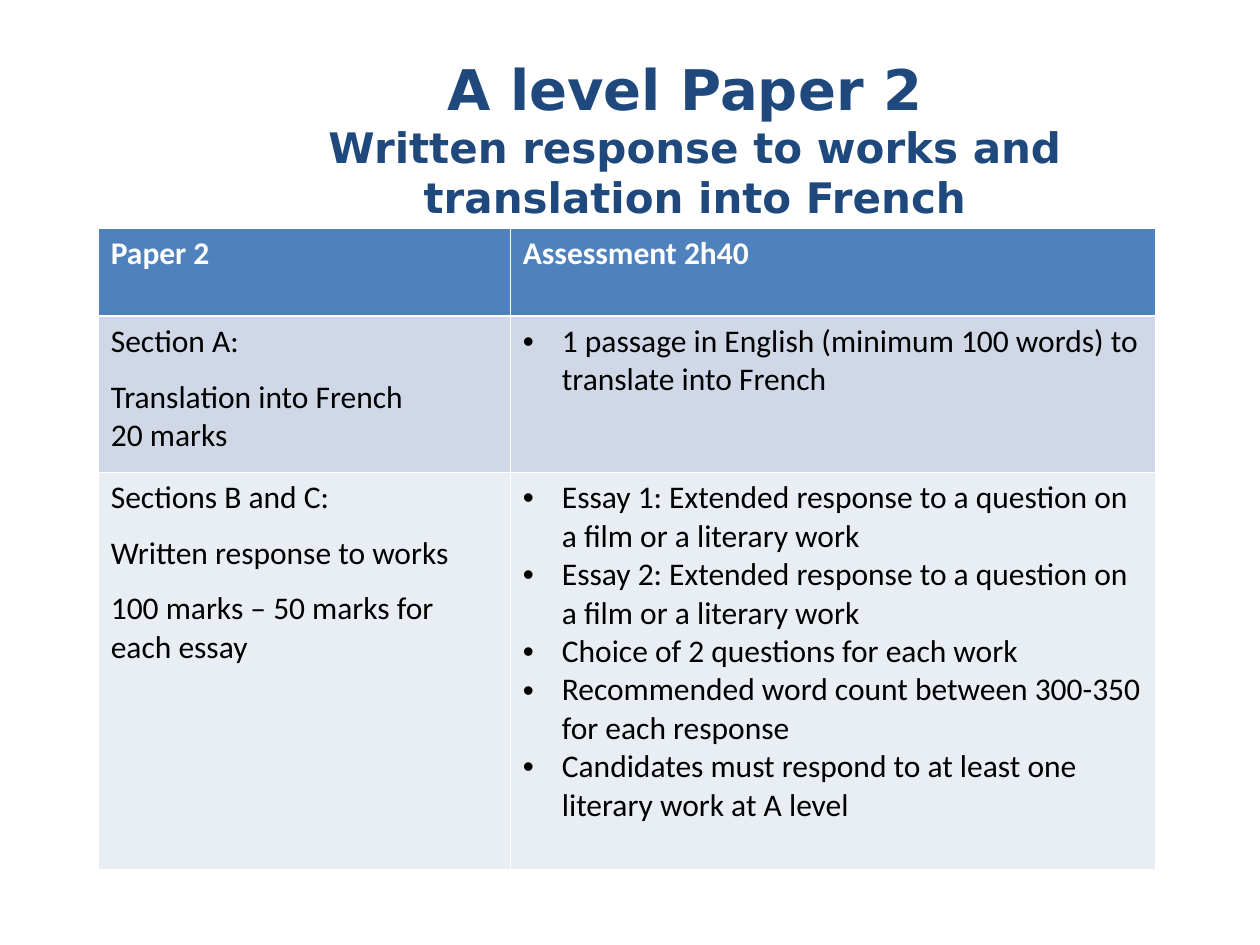
"""Build the slide that outlines A level Paper 2 and its assessment."""
from dataclasses import dataclass

from lxml import etree
from pptx import Presentation
from pptx.dml.color import RGBColor
from pptx.enum.text import MSO_ANCHOR, MSO_AUTO_SIZE, PP_ALIGN
from pptx.oxml.ns import qn
from pptx.slide import Slide
from pptx.table import _Cell
from pptx.util import Inches, Pt

CENTER = PP_ALIGN.CENTER
TOP = MSO_ANCHOR.TOP
NO_AUTOFIT = MSO_AUTO_SIZE.NONE
TITLE_ONLY_LAYOUT = 5


@dataclass(frozen=True)
class Theme:
    title_font: str = "DejaVu Sans"
    table_font: str = "Calibri"
    title_size: int = 32
    subtitle_size: int = 24
    table_size: int = 18
    paragraph_gap: float = 9.75
    bullet_indent: float = 0.31
    title_color: RGBColor = RGBColor(0x1F, 0x49, 0x7D)
    header_text: RGBColor = RGBColor(0xFF, 0xFF, 0xFF)
    body_text: RGBColor = RGBColor(0x00, 0x00, 0x00)
    header_fill: RGBColor = RGBColor(0x4F, 0x81, 0xBD)
    band_fills: tuple[RGBColor, ...] = (
        RGBColor(0xD0, 0xD8, 0xE8),
        RGBColor(0xE9, 0xED, 0xF4),
    )


@dataclass(frozen=True)
class Line:
    text: str
    gap: bool = False
    bullet: bool = False


@dataclass(frozen=True)
class Row:
    height: float
    cells: tuple[list[Line], list[Line]]


THEME = Theme()
COLUMN_WIDTHS = (3.27, 5.12)
TITLE_LINES = (
    ("A level Paper 2 ", THEME.title_size),
    ("Written response to works and translation into French", THEME.subtitle_size),
)
ROWS = (
    Row(0.7, ([Line("Paper 2")], [Line("Assessment 2h40")])),
    Row(1.24, (
        [
            Line("Section A:"),
            Line("Translation into French", gap=True),
            Line("20 marks"),
        ],
        [Line("1 passage in English (minimum 100 words) to translate into French", bullet=True)],
    )),
    Row(3.15, (
        [
            Line("Sections B and C:"),
            Line("Written response to works", gap=True),
            Line("100 marks – 50 marks for each essay", gap=True),
        ],
        [
            Line("Essay 1: Extended response to a question on a film or a literary work", bullet=True),
            Line("Essay 2: Extended response to a question on a film or a literary work", bullet=True),
            Line("Choice of 2 questions for each work", bullet=True),
            Line("Recommended word count between 300-350 for each response", bullet=True),
            Line("Candidates must respond to at least one literary work at A level", bullet=True),
        ],
    )),
)


def add_bullet(paragraph) -> None:
    """Give a paragraph a round bullet with a hanging indent."""
    properties = paragraph._p.get_or_add_pPr()
    indent = Inches(THEME.bullet_indent)
    properties.set("marL", str(indent))
    properties.set("indent", str(-indent))
    etree.SubElement(properties, qn("a:buFont"), typeface="Arial")
    etree.SubElement(properties, qn("a:buChar"), char="•")


def set_font(paragraph, name: str, size: float, color: RGBColor, bold: bool) -> None:
    """Set the font shared by all runs of a paragraph."""
    font = paragraph.font
    font.name = name
    font.size = Pt(size)
    font.color.rgb = color
    font.bold = bold


def add_title(slide: Slide) -> None:
    """Place and fill the title placeholder."""
    title = slide.shapes.title
    title.left, title.top = Inches(2.06), Inches(0.38)
    title.width, title.height = Inches(6.91), Inches(1.75)
    frame = title.text_frame
    frame.auto_size = NO_AUTOFIT
    frame.vertical_anchor = TOP
    frame.text = "\n".join(text for text, _ in TITLE_LINES)
    for paragraph, (_, size) in zip(frame.paragraphs, TITLE_LINES):
        paragraph.alignment = CENTER
        set_font(paragraph, THEME.title_font, size, THEME.title_color, True)


def fill_cell(cell: _Cell, lines: list[Line], fill: RGBColor, is_header: bool) -> None:
    """Write the lines of one table cell and colour it."""
    cell.fill.solid()
    cell.fill.fore_color.rgb = fill
    color = THEME.header_text if is_header else THEME.body_text
    cell.text_frame.text = "\n".join(line.text for line in lines)
    for paragraph, line in zip(cell.text_frame.paragraphs, lines):
        if line.gap:
            paragraph.space_before = Pt(THEME.paragraph_gap)
        if line.bullet:
            add_bullet(paragraph)
        set_font(paragraph, THEME.table_font, THEME.table_size, color, is_header)


def add_assessment_table(slide: Slide) -> None:
    """Add the table of sections and their assessment."""
    table = slide.shapes.add_table(
        len(ROWS), len(COLUMN_WIDTHS), Inches(0.78), Inches(1.81),
        Inches(sum(COLUMN_WIDTHS)), Inches(sum(row.height for row in ROWS)),
    ).table
    for column, width in zip(table.columns, COLUMN_WIDTHS):
        column.width = Inches(width)
    fills = (THEME.header_fill, *THEME.band_fills)
    for index, (row, fill) in enumerate(zip(ROWS, fills)):
        table.rows[index].height = Inches(row.height)
        for cell, lines in zip(table.rows[index].cells, row.cells):
            fill_cell(cell, lines, fill, index == 0)


def main() -> None:
    """Build and save the presentation."""
    presentation = Presentation()
    presentation.slide_width = Inches(10)
    presentation.slide_height = Inches(7.5)
    slide = presentation.slides.add_slide(presentation.slide_layouts[TITLE_ONLY_LAYOUT])
    add_title(slide)
    add_assessment_table(slide)
    presentation.save("out.pptx")


if __name__ == "__main__":
    main()
